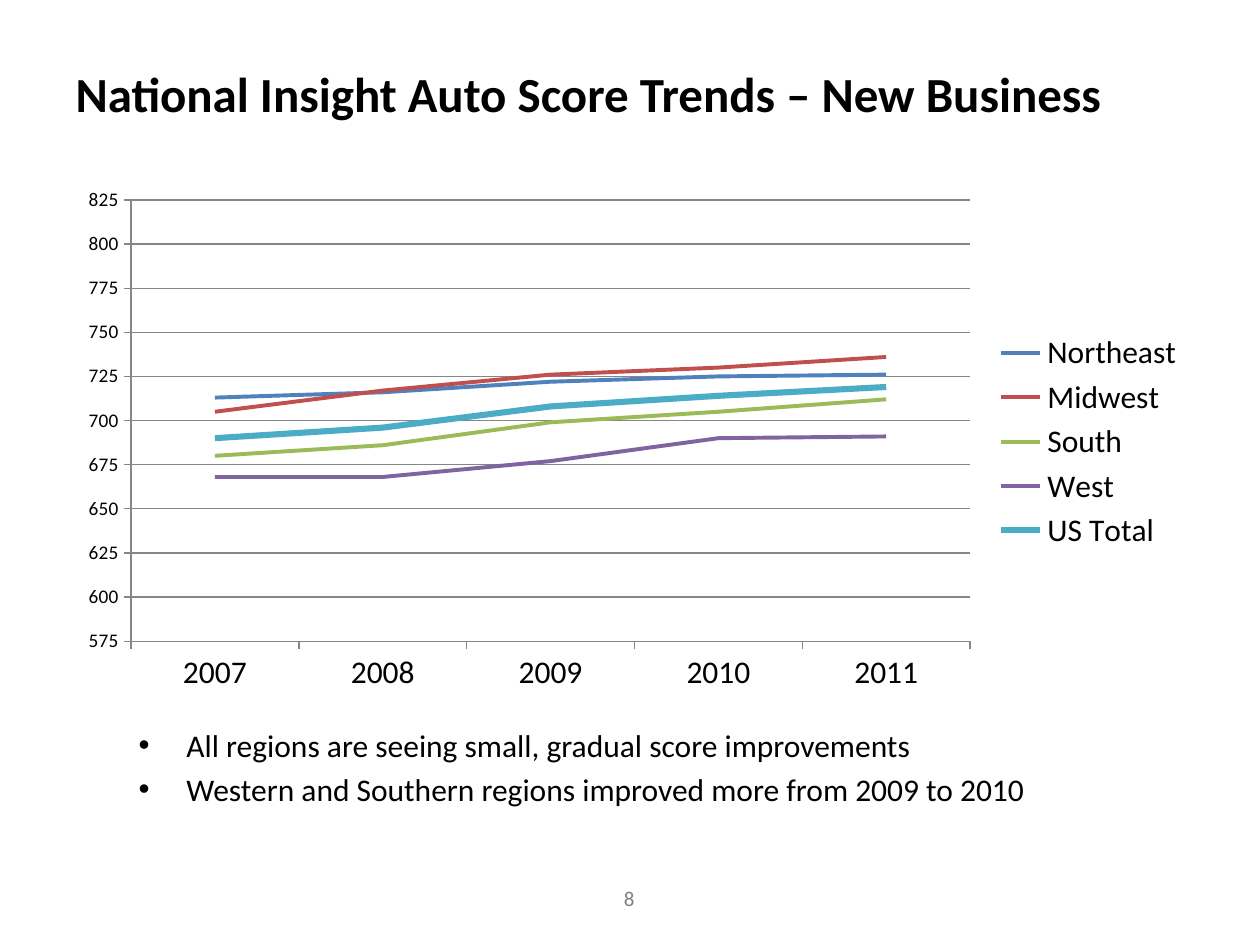
from dataclasses import dataclass

from lxml.etree import SubElement
from pptx import Presentation
from pptx.chart.data import CategoryChartData
from pptx.dml.color import RGBColor
from pptx.enum.chart import (XL_CHART_TYPE, XL_LEGEND_POSITION,
                             XL_MARKER_STYLE, XL_TICK_MARK)
from pptx.enum.text import MSO_ANCHOR, MSO_AUTO_SIZE, PP_ALIGN
from pptx.oxml import parse_xml
from pptx.oxml.ns import nsdecls, qn
from pptx.util import Inches, Pt


@dataclass(frozen=True)
class Theme:
    face: str = "Calibri"
    ink: str = "000000"
    gray: str = "808080"
    grid: str = "868686"
    head: int = 28
    body: int = 18
    note: int = 12
    tick: int = 11
    line: float = 2.25
    bold: float = 3.5


THEME = Theme()
YEARS = ["2007", "2008", "2009", "2010", "2011"]
REGIONS = [
    ("Northeast", [713, 716, 722, 725, 726], "4F81BD", THEME.line),
    ("Midwest", [705, 717, 726, 730, 736], "C0504D", THEME.line),
    ("South", [680, 686, 699, 705, 712], "9BBB59", THEME.line),
    ("West", [668, 668, 677, 690, 691], "8064A2", THEME.line),
    ("US Total", [690, 696, 708, 714, 719], "4BACC6", THEME.bold),
]
POINTS = [
    "All regions are seeing small, gradual score improvements",
    "Western and Southern regions improved more from 2009 to 2010",
]


def style(font, size, color=THEME.ink, bold=False):
    font.name = THEME.face
    font.size = Pt(size)
    font.bold = bold
    font.color.rgb = RGBColor.from_string(color)


def place(shape, left, top, width, height):
    shape.left, shape.top = Inches(left), Inches(top)
    shape.width, shape.height = Inches(width), Inches(height)


def write(shape, text, align, size, color=THEME.ink, bold=False):
    frame = shape.text_frame
    frame.word_wrap = True
    frame.text = text
    para = frame.paragraphs[0]
    para.alignment = align
    style(para.runs[0].font, size, color, bold)


def add_title(slide):
    title = slide.shapes.title
    place(title, 0.5, 0.3, 9, 0.87)
    title.text_frame.vertical_anchor = MSO_ANCHOR.MIDDLE
    title.text_frame.auto_size = MSO_AUTO_SIZE.NONE
    write(title, "National Insight Auto Score Trends – New Business",
          PP_ALIGN.LEFT, THEME.head, bold=True)


def add_list(slide):
    body = slide.placeholders[1]
    place(body, 0.75, 5.71, 7.67, 0.77)
    frame = body.text_frame
    frame.word_wrap = True
    frame.auto_size = MSO_AUTO_SIZE.NONE
    frame.vertical_anchor = MSO_ANCHOR.TOP
    frame.text = "\n".join(POINTS)
    for i, para in enumerate(frame.paragraphs):
        para.level = 1
        para.space_before = Pt(0.2 * THEME.body if i else 0)
        props = para._p.get_or_add_pPr()
        props.set("marL", str(Inches(0.63)))
        props.set("indent", str(Inches(-0.38)))
        SubElement(props, qn("a:buFont")).set("typeface", "Arial")
        SubElement(props, qn("a:buChar")).set("char", "•")
        style(para.runs[0].font, THEME.body)


def set_plot(chart, left, top, width, height):
    """Fix the inner plot area, in fractions of the chart."""
    area = chart._chartSpace.chart.plotArea
    for old in area.findall(qn("c:layout")):
        area.remove(old)
    sides = zip("xywh", (left, top, width, height))
    marks = "".join(f'<c:{key} val="{val}"/>' for key, val in sides)
    area.insert(0, parse_xml(
        f'<c:layout {nsdecls("c")}><c:manualLayout>'
        '<c:layoutTarget val="inner"/><c:xMode val="edge"/>'
        f'<c:yMode val="edge"/>{marks}</c:manualLayout></c:layout>'))


def set_axis(axis, size):
    axis.major_tick_mark = XL_TICK_MARK.OUTSIDE
    axis.minor_tick_mark = XL_TICK_MARK.NONE
    axis.format.line.color.rgb = RGBColor.from_string(THEME.grid)
    style(axis.tick_labels.font, size)


def add_trend(slide):
    data = CategoryChartData(number_format="General")
    data.categories = YEARS
    for name, scores, _, _ in REGIONS:
        data.add_series(name, scores)
    chart = slide.shapes.add_chart(
        XL_CHART_TYPE.LINE, Inches(0.5), Inches(1.42),
        Inches(9), Inches(4.17), data).chart
    style(chart.font, THEME.body)
    chart.has_title = False
    chart.has_legend = True
    chart.legend.position = XL_LEGEND_POSITION.RIGHT
    chart.legend.include_in_layout = False
    style(chart.legend.font, THEME.body)
    set_axis(chart.category_axis, THEME.body)
    scale = chart.value_axis
    set_axis(scale, THEME.tick)
    scale.minimum_scale, scale.maximum_scale = 575, 825
    scale.major_unit = 25
    scale.has_major_gridlines = True
    scale.major_gridlines.format.line.color.rgb = RGBColor.from_string(THEME.grid)
    plot = chart.plots[0]
    plot.vary_by_categories = False
    for series, (_, _, color, width) in zip(plot.series, REGIONS):
        series.smooth = False
        series.marker.style = XL_MARKER_STYLE.NONE
        series.format.line.color.rgb = RGBColor.from_string(color)
        series.format.line.width = Pt(width)
    set_plot(chart, 0.06, 0.04, 0.74, 0.84)


def add_number(slide):
    box = slide.shapes.add_textbox(
        Inches(3.83), Inches(6.93), Inches(2.33), Inches(0.4))
    box.text_frame.vertical_anchor = MSO_ANCHOR.MIDDLE
    write(box, "8", PP_ALIGN.CENTER, THEME.note, THEME.gray)


def main():
    deck = Presentation()
    deck.slide_width, deck.slide_height = Inches(10), Inches(7.5)
    slide = deck.slides.add_slide(deck.slide_layouts[1])
    add_title(slide)
    add_trend(slide)
    add_number(slide)
    add_list(slide)
    deck.save("out.pptx")


if __name__ == "__main__":
    main()
